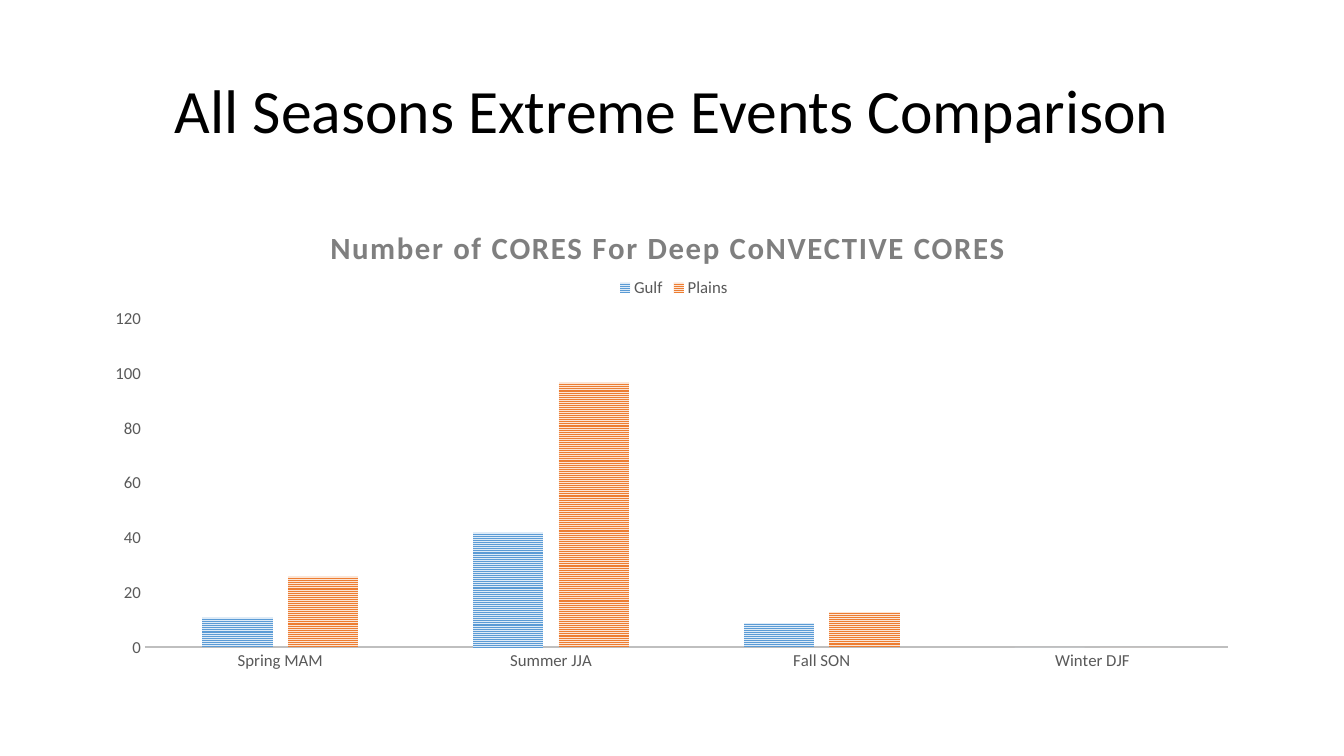
"""Build a slide that compares extreme events across the seasons."""
from lxml import etree
from pptx import Presentation
from pptx.chart.data import CategoryChartData
from pptx.dml.color import RGBColor
from pptx.enum.chart import XL_CHART_TYPE as ChartType, XL_LEGEND_POSITION as LegendPosition
from pptx.enum.chart import XL_TICK_MARK as TickMark
from pptx.enum.dml import MSO_PATTERN as Pattern
from pptx.enum.text import MSO_ANCHOR as Anchor, PP_ALIGN as Align
from pptx.oxml.ns import qn
from pptx.util import Inches, Pt

HEADING = "All Seasons Extreme Events Comparison"
CHART_TITLE = "Number of CORES For Deep CoNVECTIVE CORES"
SEASONS = ["Spring MAM", "Summer JJA", "Fall SON", "Winter DJF"]
REGIONS = [
    ("Gulf", [11, 42, 9, 0], "5B9BD5", "DEEBF7"),
    ("Plains", [26, 97, 13, 0], "ED7D31", "FBE5D6"),
]
FONT = "Calibri"
LEFT, WIDTH = 0.92, 11.5
HEADING_TOP, HEADING_HEIGHT = 0.4, 1.45
CHART_TOP, CHART_HEIGHT = 2, 4.76
TITLE_PLACE = {"x": 0.2, "y": 0.04}
LEGEND_PLACE = {"x": 0.45, "y": 0.15}
PLOT_PLACE = {"x": 0.045, "y": 0.245, "w": 0.934, "h": 0.684}


def color(code):
    return RGBColor.from_string(code)


def style(font, size, code, bold=False):
    font.name, font.size, font.bold = FONT, Pt(size), bold
    font.color.rgb = color(code)


def write(frame, text, size=12, code="000000", bold=False, align=Align.CENTER, line=None):
    para = frame.paragraphs[0]
    para.alignment = align
    para.line_spacing = line
    span = para.add_run()
    span.text = text
    style(span.font, size, code, bold)
    return span


def place(element, spots, after, inner=False):
    for old in element.findall(qn("c:layout")):
        element.remove(old)
    layout = etree.Element(qn("c:layout"))
    manual = etree.SubElement(layout, qn("c:manualLayout"))
    if inner:
        etree.SubElement(manual, qn("c:layoutTarget"), val="inner")
    for side in "xy":
        etree.SubElement(manual, qn(f"c:{side}Mode"), val="edge")
    for side, share in spots.items():
        etree.SubElement(manual, qn(f"c:{side}"), val=str(share))
    if after is None:
        element.insert(0, layout)
    else:
        element.find(qn(after)).addnext(layout)


def add_heading(page):
    box = page.shapes.add_textbox(
        Inches(LEFT), Inches(HEADING_TOP), Inches(WIDTH), Inches(HEADING_HEIGHT))
    box.text_frame.word_wrap = True
    box.text_frame.vertical_anchor = Anchor.MIDDLE
    write(box.text_frame, HEADING, size=44, line=0.9)


def add_seasons_chart(page):
    data = CategoryChartData()
    data.categories = SEASONS
    for name, counts, *_ in REGIONS:
        data.add_series(name, counts)
    chart = page.shapes.add_chart(
        ChartType.COLUMN_CLUSTERED, Inches(LEFT), Inches(CHART_TOP),
        Inches(WIDTH), Inches(CHART_HEIGHT), data).chart
    style(chart.font, 10, "000000")

    chart.has_title = True
    span = write(chart.chart_title.text_frame, CHART_TITLE, size=22, code="7F7F7F", bold=True)
    span.font._element.set("spc", "130")
    chart.has_legend = True
    chart.legend.position = LegendPosition.TOP
    chart.legend.include_in_layout = False
    style(chart.legend.font, 12, "595959")

    plot = chart.plots[0]
    plot.gap_width, plot.overlap, plot.vary_by_categories = 164, -22, False
    for series, (_, _, front, back) in zip(plot.series, REGIONS):
        fill = series.format.fill
        fill.patterned()
        fill.pattern = Pattern.NARROW_HORIZONTAL
        fill.fore_color.rgb, fill.back_color.rgb = color(front), color(back)

    for axis in (chart.category_axis, chart.value_axis):
        axis.has_major_gridlines = False
        axis.major_tick_mark = axis.minor_tick_mark = TickMark.NONE
        style(axis.tick_labels.font, 12, "595959")
    season_line = chart.category_axis.format.line
    season_line.color.rgb, season_line.width = color("BFBFBF"), Pt(1.5)
    chart.value_axis.format.line.fill.background()
    chart.value_axis.minimum_scale, chart.value_axis.maximum_scale = 0, 120
    chart.value_axis.major_unit = 20

    place(chart.chart_title._element, TITLE_PLACE, "c:tx")
    place(chart.legend._element, LEGEND_PLACE, "c:legendPos")
    place(chart._chartSpace.chart.plotArea, PLOT_PLACE, None, inner=True)


def main():
    deck = Presentation()
    deck.slide_width, deck.slide_height = Inches(13.33), Inches(7.5)
    page = deck.slides.add_slide(deck.slide_layouts[6])
    add_heading(page)
    add_seasons_chart(page)
    deck.save("out.pptx")


if __name__ == "__main__":
    main()
